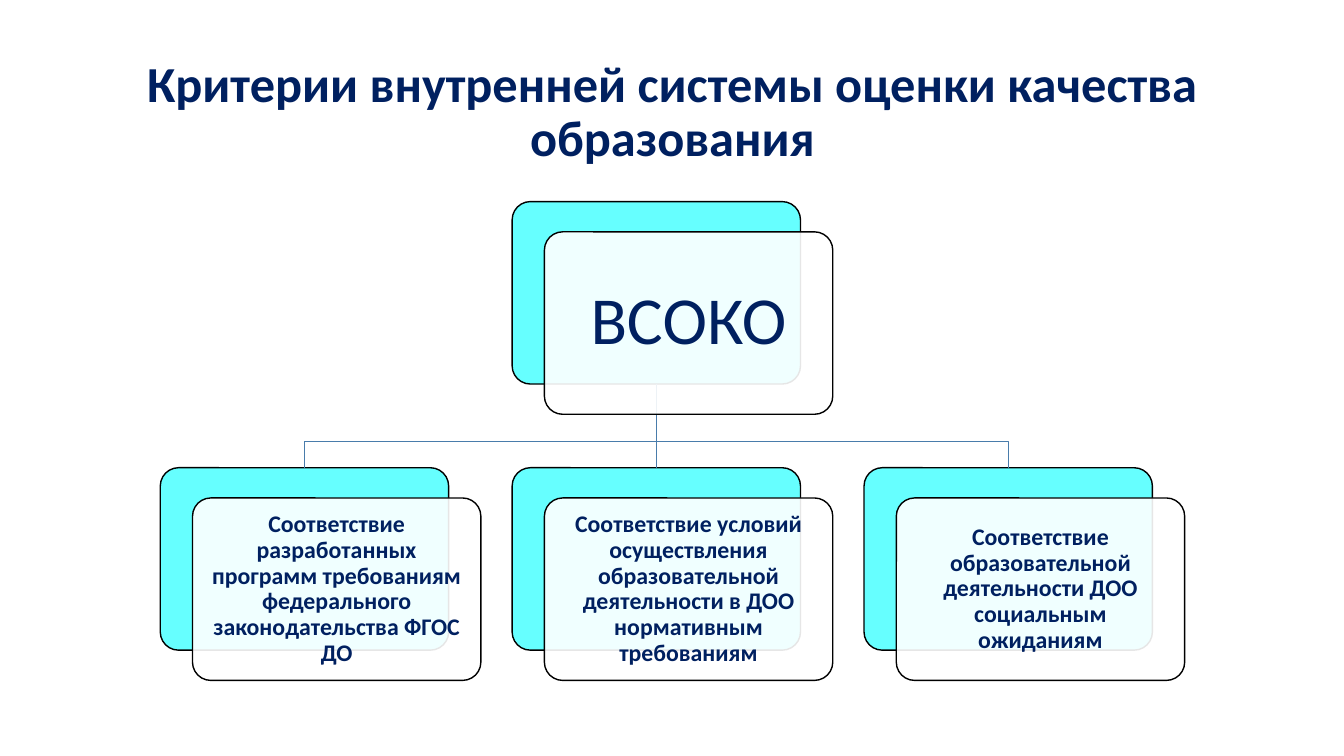
from dataclasses import dataclass

from pptx import Presentation
from pptx.dml.color import RGBColor
from pptx.enum.shapes import MSO_CONNECTOR, MSO_SHAPE
from pptx.enum.text import MSO_ANCHOR, MSO_AUTO_SIZE, PP_ALIGN
from pptx.oxml.ns import qn
from pptx.util import Inches, Pt
from lxml import etree

ROUNDED = MSO_SHAPE.ROUNDED_RECTANGLE
STRAIGHT = MSO_CONNECTOR.STRAIGHT
MIDDLE = MSO_ANCHOR.MIDDLE
CENTER = PP_ALIGN.CENTER
NO_AUTOFIT = MSO_AUTO_SIZE.NONE

# Content
TITLE = "Критерии внутренней системы оценки качества образования"
ROOT = "ВСОКО"
CRITERIA = [
    "Соответствие разработанных программ требованиям федерального законодательства ФГОС ДО",
    "Соответствие условий осуществления образовательной деятельности в ДОО нормативным требованиям",
    "Соответствие образовательной деятельности ДОО социальным ожиданиям",
]


@dataclass(frozen=True)
class Theme:
    font: str = "Calibri"
    ink: RGBColor = RGBColor(0x00, 0x20, 0x60)
    accent: RGBColor = RGBColor(0x66, 0xFF, 0xFF)
    card: RGBColor = RGBColor(0xFF, 0xFF, 0xFF)
    outline: RGBColor = RGBColor(0x00, 0x00, 0x00)
    branch: RGBColor = RGBColor(0x49, 0x7C, 0xAB)
    title_size: int = 36
    root_size: int = 48
    criterion_size: int = 17
    card_opacity: int = 90


THEME = Theme()

# Layout, in inches
CARD_WIDTH, CARD_HEIGHT = 2.86, 1.81
CARD_SHIFT_X, CARD_SHIFT_Y = 0.32, 0.3
FIRST_LEFT, COLUMN_STEP = 1.59, 3.49
ROOT_TOP, CRITERIA_TOP, BRANCH_Y = 2.0, 4.64, 4.38
ROOT_INSET, CRITERION_INSET = 0.25, 0.12


def write_text(shape, text, size, bold, inset):
    frame = shape.text_frame
    frame_format = {"word_wrap": True, "auto_size": NO_AUTOFIT, "vertical_anchor": MIDDLE}
    for side in ("left", "top", "right", "bottom"):
        frame_format[f"margin_{side}"] = Inches(inset)
    for name, value in frame_format.items():
        setattr(frame, name, value)
    para = frame.paragraphs[0]
    para.alignment, para.line_spacing = CENTER, 0.9
    span = para.add_run()
    span.text = text
    for name, value in {"name": THEME.font, "size": Pt(size), "bold": bold}.items():
        setattr(span.font, name, value)
    span.font.color.rgb = THEME.ink


def add_card(page, left, top, color):
    box = page.shapes.add_shape(
        ROUNDED, Inches(left), Inches(top), Inches(CARD_WIDTH), Inches(CARD_HEIGHT))
    box.adjustments[0] = 0.1
    box.shadow.inherit = False
    box.fill.solid()
    box.fill.fore_color.rgb = color
    box.line.color.rgb = THEME.outline
    box.line.width = Pt(1)
    return box


def add_front_card(page, left, top, text, size, bold, inset):
    box = add_card(page, left + CARD_SHIFT_X, top + CARD_SHIFT_Y, THEME.card)
    color = box.fill._xPr.find(f".//{qn('a:srgbClr')}")
    etree.SubElement(color, qn("a:alpha"), val=str(THEME.card_opacity * 1000))
    write_text(box, text, size, bold, inset)


def style_branch(line):
    line.color.rgb = THEME.branch
    line.width = Pt(1)


def add_elbow(page, start, end):
    builder = page.shapes.build_freeform(Inches(start[0]), Inches(start[1]))
    corners = [(start[0], BRANCH_Y), (end[0], BRANCH_Y), end]
    builder.add_line_segments([(Inches(x), Inches(y)) for x, y in corners], close=False)
    elbow = builder.convert_to_shape()
    elbow.fill.background()
    elbow.shadow.inherit = False
    style_branch(elbow.line)


def add_trunk(page, root_card, criterion_card):
    trunk = page.shapes.add_connector(STRAIGHT, 0, 0, 0, 0)
    trunk.begin_connect(root_card, 2)
    trunk.end_connect(criterion_card, 0)
    style_branch(trunk.line)
    etree.SubElement(trunk._element.spPr, qn("a:effectLst"))


def main():
    deck = Presentation()
    deck.slide_width, deck.slide_height = Inches(13.33), Inches(7.5)
    page = deck.slides.add_slide(deck.slide_layouts[5])

    # Title
    title = page.shapes.title
    title.left, title.top = Inches(0.92), Inches(0.4)
    title.width, title.height = Inches(11.5), Inches(1.45)
    write_text(title, TITLE, THEME.title_size, True, 0.1)

    # Coloured back cards
    lefts = [FIRST_LEFT + COLUMN_STEP * column for column in range(len(CRITERIA))]
    middle = len(CRITERIA) // 2
    root_left = lefts[middle]
    root_card = add_card(page, root_left, ROOT_TOP, THEME.accent)
    criterion_cards = [add_card(page, left, CRITERIA_TOP, THEME.accent) for left in lefts]

    # Branches from the root to each criterion
    start = (root_left + CARD_WIDTH / 2, ROOT_TOP + CARD_HEIGHT)
    for column, left in enumerate(lefts):
        if column == middle:
            add_trunk(page, root_card, criterion_cards[column])
        else:
            add_elbow(page, start, (left + CARD_WIDTH / 2, CRITERIA_TOP))

    # Translucent front cards with text
    add_front_card(page, root_left, ROOT_TOP, ROOT, THEME.root_size, False, ROOT_INSET)
    for left, text in zip(lefts, CRITERIA):
        add_front_card(
            page, left, CRITERIA_TOP, text, THEME.criterion_size, True, CRITERION_INSET)

    deck.save("out.pptx")


if __name__ == "__main__":
    main()
